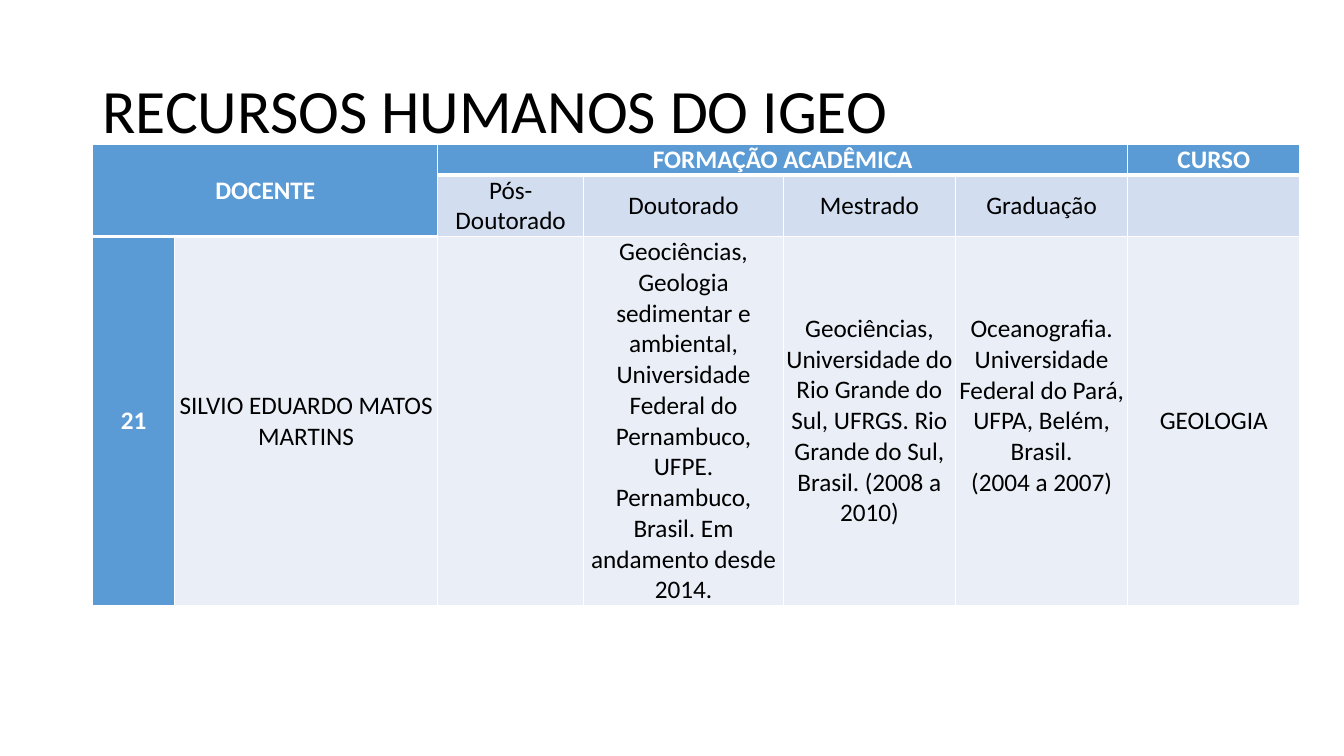
import pptx
import pptx.dml.color
import pptx.enum.text
import pptx.oxml
import pptx.oxml.ns
import pptx.util
from pptx.util import Cm

COLORS = {
    "header": "5B9BD5",
    "subheader": "D2DEEF",
    "body": "EAEFF7",
    "white": "FFFFFF",
    "black": "000000",
}
FONT = "Calibri"
COLUMN_WIDTHS = [2.06, 6.63, 3.68, 5.03, 4.34, 4.34, 4.34]
ROW_HEIGHTS = [0.77, 1.55, 9.3]
ROWS = [
    ["DOCENTE", "", "FORMAÇÃO ACADÊMICA", "", "", "", "CURSO"],
    ["", "", "Pós-Doutorado", "Doutorado", "Mestrado", "Graduação", ""],
    [
        "21",
        "SILVIO EDUARDO MATOS MARTINS",
        "",
        "Geociências, Geologia sedimentar e ambiental, Universidade Federal do "
        "Pernambuco, UFPE. Pernambuco, Brasil. Em andamento desde 2014.",
        "Geociências, Universidade do Rio Grande do Sul, UFRGS. "
        "Rio Grande do Sul, Brasil. (2008 a 2010)",
        "Oceanografia. Universidade Federal do Pará, UFPA, Belém, Brasil.\n(2004 a 2007)",
        "GEOLOGIA",
    ],
]
MERGES = [((0, 0), (1, 1)), ((0, 2), (0, 5))]
GRADUATION_CELL = (2, 5)


def rgb(name):
    return pptx.dml.color.RGBColor.from_string(COLORS[name])


def write_text(frame, text, size=18, color="black", bold=False, align="LEFT", line_spacing=None):
    """Fill a text frame, one paragraph for each line of the text."""
    frame.text = text
    frame.word_wrap = True
    for paragraph in frame.paragraphs:
        paragraph.alignment = getattr(pptx.enum.text.PP_ALIGN, align)
        paragraph.line_spacing = line_spacing
        font = paragraph.font
        for run in paragraph.runs:
            font = run.font
        font.name = FONT
        font.size = pptx.util.Pt(size)
        font.bold = bold
        font.color.rgb = rgb(color)


def add_title(slide, text):
    title = slide.shapes.add_textbox(Cm(2.33), Cm(1.01), Cm(29.21), Cm(3.68))
    title.text_frame.vertical_anchor = pptx.enum.text.MSO_ANCHOR.MIDDLE
    write_text(title.text_frame, text, size=44, line_spacing=0.9)


def set_borders(cell, top, bottom):
    """Draw white cell edges; top and bottom are widths in points."""
    properties = cell._tc.get_or_add_tcPr()
    for side, width in {"L": 1, "R": 1, "T": top, "B": bottom}.items():
        properties.append(pptx.oxml.parse_xml(
            f'<a:ln{side} {pptx.oxml.ns.nsdecls("a")} w="{pptx.util.Pt(width)}">'
            f'<a:solidFill><a:srgbClr val="{COLORS["white"]}"/></a:solidFill></a:ln{side}>'
        ))


def bottom_width(row, column):
    """The header blocks are closed by a thick line, all else by a thin one."""
    return 3 if row == 0 or (row == 1 and column < 2) else 1


def is_header(row, column):
    return row == 0 or column == 0 or (row == 1 and column == 1)


def format_cell(cell, row, column):
    header = is_header(row, column)
    set_borders(cell, bottom_width(row - 1, column) if row else 1, bottom_width(row, column))
    cell.fill.solid()
    cell.fill.fore_color.rgb = rgb("header" if header else "subheader" if row == 1 else "body")
    cell.vertical_anchor = pptx.enum.text.MSO_ANCHOR.MIDDLE
    cell.margin_left = cell.margin_right = Cm(0.05)
    cell.margin_top = 0
    cell.margin_bottom = Cm(0.76) if (row, column) == GRADUATION_CELL else 0
    write_text(cell.text_frame, ROWS[row][column], color="white" if header else "black",
               bold=header, align="CENTER")


def add_staff_table(slide):
    staff = slide.shapes.add_table(
        len(ROWS), len(COLUMN_WIDTHS), Cm(2.34), Cm(3.64),
        Cm(sum(COLUMN_WIDTHS)), Cm(sum(ROW_HEIGHTS)),
    ).table
    for column, width in zip(staff.columns, COLUMN_WIDTHS):
        column.width = Cm(width)
    for row, height in zip(staff.rows, ROW_HEIGHTS):
        row.height = Cm(height)
    for first, last in MERGES:
        staff.cell(*first).merge(staff.cell(*last))
    for row in range(len(ROWS)):
        for column in range(len(COLUMN_WIDTHS)):
            format_cell(staff.cell(row, column), row, column)


def main():
    deck = pptx.Presentation()
    deck.slide_width, deck.slide_height = Cm(33.87), Cm(19.05)
    slide = deck.slides.add_slide(deck.slide_layouts[6])
    add_title(slide, "RECURSOS HUMANOS DO IGEO")
    add_staff_table(slide)
    deck.save("out.pptx")


if __name__ == "__main__":
    main()
